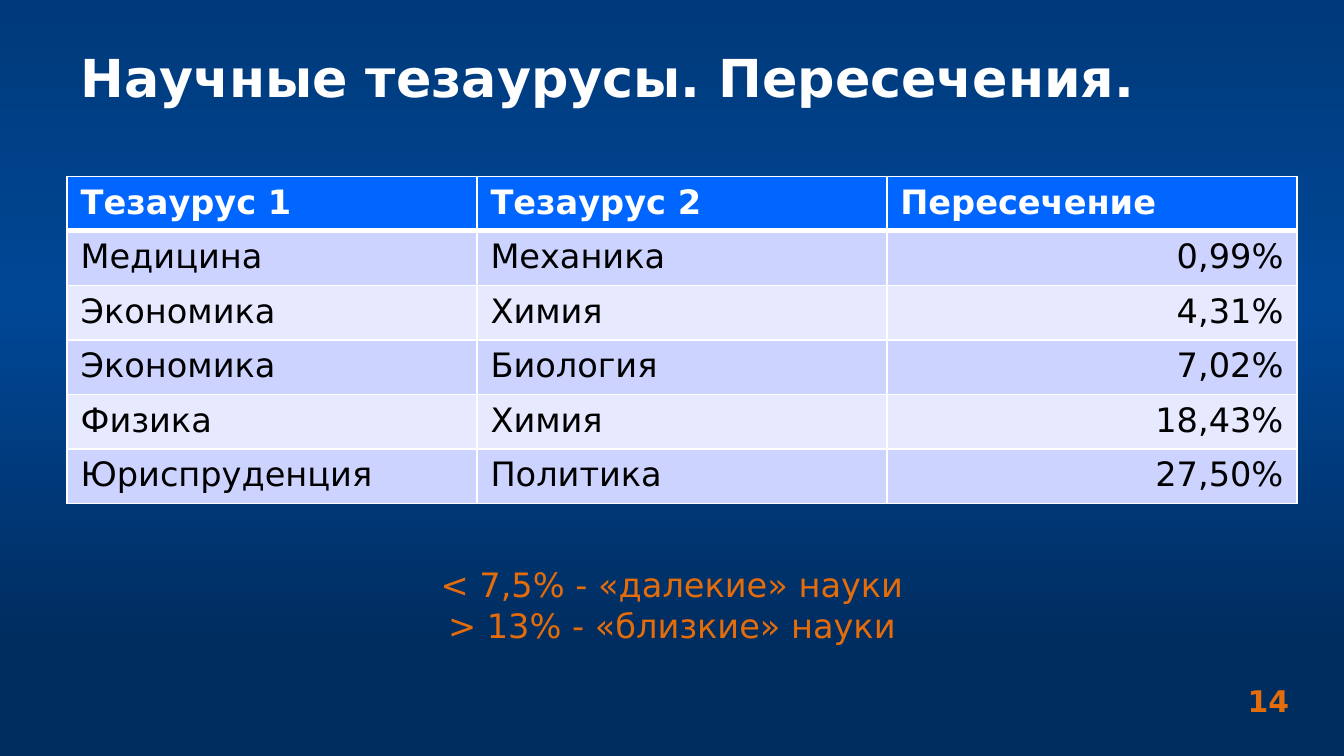
from copy import deepcopy
from dataclasses import dataclass

from lxml import etree
from pptx import Presentation
from pptx import util as u
from pptx.dml.color import RGBColor
from pptx.enum import text
from pptx.oxml import ns
from pptx.slide import Slide
from pptx.table import _Cell

FONT = "DejaVu Sans"
WHITE = RGBColor(0xFF, 0xFF, 0xFF)
BLACK = RGBColor(0x00, 0x00, 0x00)
ORANGE = RGBColor(0xE4, 0x6C, 0x0A)
HEADER_BLUE = RGBColor(0x00, 0x66, 0xFF)
BAND_DARK = RGBColor(0xCC, 0xD3, 0xFF)
BAND_LIGHT = RGBColor(0xE7, 0xEA, 0xFF)
BACKGROUND_STOPS = (
    (0, RGBColor(0x00, 0x3A, 0x7A)),
    (0.4, RGBColor(0x00, 0x47, 0x96)),
    (0.85, RGBColor(0x00, 0x2D, 0x60)),
)
LEFT, CENTER, RIGHT = text.PP_ALIGN.LEFT, text.PP_ALIGN.CENTER, text.PP_ALIGN.RIGHT


@dataclass(frozen=True)
class Style:
    size: float
    color: RGBColor
    bold: bool = False
    align: text.PP_ALIGN = LEFT


@dataclass(frozen=True)
class Label:
    lines: tuple[str, ...]
    left: float
    top: float
    width: float
    height: float
    style: Style
    anchor: text.MSO_ANCHOR = text.MSO_ANCHOR.MIDDLE
    wrap: bool = True


@dataclass(frozen=True)
class Overlap:
    first: str
    second: str
    share: str


LABELS = (
    Label(("Научные тезаурусы. Пересечения.",), 36, 7.2, 648, 67.7, Style(28, WHITE, True)),
    Label(("14",), 530, 364.3, 167.7, 21.6, Style(16, ORANGE, True, RIGHT)),
    Label(
        ("< 7,5% - «далекие» науки", "> 13% - «близкие» науки"),
        225.4, 298.8, 269.3, 51,
        Style(18, ORANGE, align=CENTER), text.MSO_ANCHOR.TOP, False,
    ),
)
HEADER = Overlap("Тезаурус 1", "Тезаурус 2", "Пересечение")
OVERLAPS = (
    Overlap("Медицина", "Механика", "0,99%"),
    Overlap("Экономика", "Химия", "4,31%"),
    Overlap("Экономика", "Биология", "7,02%"),
    Overlap("Физика", "Химия", "18,43%"),
    Overlap("Юриспруденция", "Политика", "27,50%"),
)


def write(frame, lines: tuple[str, ...], style: Style) -> None:
    frame.text = "\n".join(lines)
    for paragraph in frame.paragraphs:
        paragraph.alignment = style.align
        paragraph.font.name = FONT
        paragraph.font.size = u.Pt(style.size)
        paragraph.font.bold = style.bold
        paragraph.font.color.rgb = style.color


def paint_background(slide: Slide) -> None:
    fill = slide.background.fill
    fill.gradient()
    fill.gradient_angle = 270
    stop_list = slide.element.xpath(".//a:gsLst")[0]
    stop_list.append(deepcopy(stop_list[-1]))
    for stop, (position, color) in zip(fill.gradient_stops, BACKGROUND_STOPS):
        stop.position = position
        stop.color.rgb = color


def add_label(slide: Slide, label: Label) -> None:
    box = slide.shapes.add_textbox(
        u.Pt(label.left), u.Pt(label.top), u.Pt(label.width), u.Pt(label.height)
    )
    frame = box.text_frame
    frame.word_wrap = label.wrap
    frame.vertical_anchor = label.anchor
    write(frame, label.lines, label.style)


def set_borders(cell: _Cell, top: float, bottom: float) -> None:
    properties = cell._tc.get_or_add_tcPr()
    widths = {"lnL": 1, "lnR": 1, "lnT": top, "lnB": bottom}
    for index, (side, width) in enumerate(widths.items()):
        line = etree.Element(ns.qn(f"a:{side}"), w=str(u.Pt(width)))
        solid = etree.SubElement(line, ns.qn("a:solidFill"))
        etree.SubElement(solid, ns.qn("a:srgbClr"), val=str(WHITE))
        properties.insert(index, line)


def add_overlap_table(slide: Slide) -> None:
    rows = (HEADER, *OVERLAPS)
    table = slide.shapes.add_table(
        len(rows), 3, u.Pt(36), u.Pt(94.5), u.Pt(658.8), u.Pt(175.2)
    ).table
    for r, overlap in enumerate(rows):
        is_header = r == 0
        band = BAND_DARK if r % 2 else BAND_LIGHT
        for c, value in enumerate((overlap.first, overlap.second, overlap.share)):
            cell = table.cell(r, c)
            cell.fill.solid()
            cell.fill.fore_color.rgb = HEADER_BLUE if is_header else band
            set_borders(cell, 3 if r == 1 else 1, 3 if is_header else 1)
            align = RIGHT if c == 2 and not is_header else LEFT
            color = WHITE if is_header else BLACK
            write(cell.text_frame, (value,), Style(18, color, is_header, align))


def main() -> None:
    deck = Presentation()
    deck.slide_width, deck.slide_height = u.Pt(720), u.Pt(405)
    slide = deck.slides.add_slide(deck.slide_layouts[6])
    paint_background(slide)
    add_overlap_table(slide)
    for label in LABELS:
        add_label(slide, label)
    deck.save("out.pptx")


if __name__ == "__main__":
    main()
